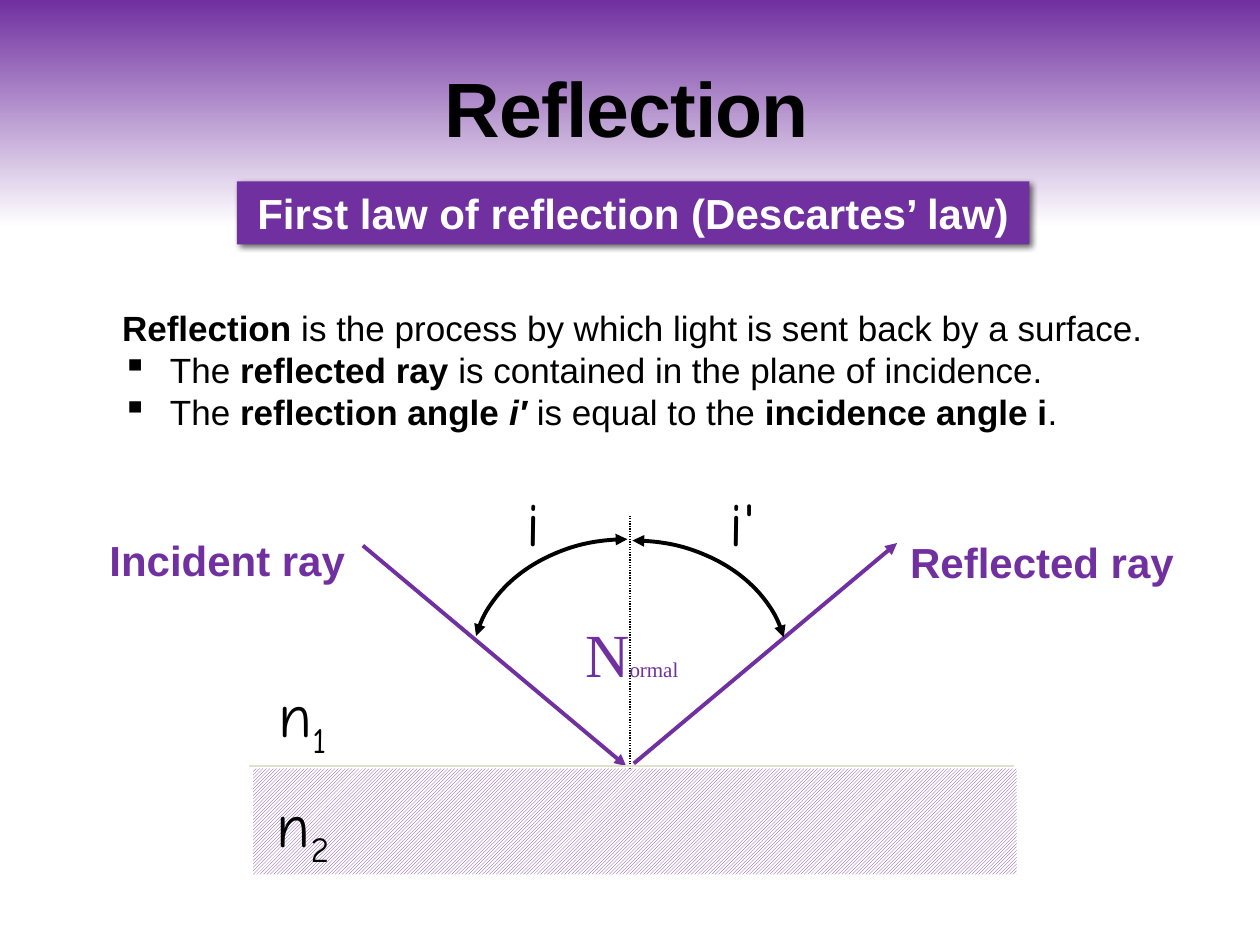
import pptx
import pptx.dml.color
import pptx.enum.dml
import pptx.enum.shapes
import pptx.enum.text
import pptx.oxml
import pptx.oxml.ns
import pptx.util

Inches = pptx.util.Inches
Pt = pptx.util.Pt
Shape = pptx.enum.shapes.MSO_SHAPE
Align = pptx.enum.text.PP_ALIGN
Anchor = pptx.enum.text.MSO_ANCHOR
Dash = pptx.enum.dml.MSO_LINE

PURPLE, BLACK, WHITE, BEIGE = "7030A0", "000000", "FFFFFF", "E2DFCC"
SANS, HAND, SERIF = "Arial", "Comic Neue", "Times New Roman"


def color(value):
    return pptx.dml.color.RGBColor.from_string(value)


def add_xml(parent, xml):
    namespace = pptx.oxml.ns.nsdecls("a")
    element = pptx.oxml.parse_xml(xml.replace(" ", f" {namespace} ", 1))
    parent.append(element)


class SlideBuilder:
    """Holds the shared style and the slide being built."""

    def __init__(self, presentation):
        self.slide = presentation.slides.add_slide(presentation.slide_layouts[5])
        self.shapes = self.slide.shapes

    def background(self, top, bottom, end):
        fill = self.slide.background.fill
        fill.gradient()
        fill.gradient_angle = 270
        for stop, value, position in zip(fill.gradient_stops, (top, bottom), (0, end)):
            stop.color.rgb = color(value)
            stop.position = position

    def run(self, paragraph, text, size, value=BLACK, font=SANS, bold=False,
            italic=False, subscript=False):
        run = paragraph.add_run()
        run.text = text
        run.font.size = Pt(size)
        run.font.name = font
        run.font.bold = bold
        run.font.italic = italic
        run.font.color.rgb = color(value)
        if subscript:
            run.font._element.set("baseline", "-25000")
        return run

    def title(self, text, box):
        title = self.shapes.title
        title.left, title.top, title.width, title.height = map(Inches, box)
        frame = title.text_frame
        frame.auto_size = pptx.enum.text.MSO_AUTO_SIZE.NONE
        frame.vertical_anchor = Anchor.BOTTOM
        paragraph = frame.paragraphs[0]
        paragraph.alignment = Align.CENTER
        paragraph.line_spacing = 0.85
        run = self.run(paragraph, text, 44, bold=True)
        run.font._element.set("spc", "-50")

    def text_box(self, box, wrap=True):
        frame = self.shapes.add_textbox(*map(Inches, box)).text_frame
        frame.word_wrap = wrap
        return frame

    def label(self, box, text, size, wrap=False, small="", small_size=None,
              subscript=False, **style):
        paragraph = self.text_box(box, wrap).paragraphs[0]
        paragraph.alignment = Align.CENTER
        self.run(paragraph, text, size, **style)
        if small:
            self.run(paragraph, small, small_size or size, subscript=subscript, **style)

    def body(self, box, lines, size):
        """Each line is (bulleted, runs); each run is (text, bold, italic)."""
        frame = self.text_box(box)
        for index, (bulleted, runs) in enumerate(lines):
            paragraph = frame.add_paragraph() if index else frame.paragraphs[0]
            paragraph.alignment = Align.JUSTIFY
            if bulleted:
                properties = paragraph._p.get_or_add_pPr()
                properties.set("marL", str(Inches(0.38)))
                properties.set("indent", str(-Inches(0.38)))
                add_xml(properties, '<a:buChar char="▪"/>')
            for text, bold, italic in runs:
                self.run(paragraph, text, size, bold=bold, italic=italic)

    def rectangle(self, box):
        shape = self.shapes.add_shape(Shape.RECTANGLE, *map(Inches, box))
        shape.shadow.inherit = False
        shape.line.fill.background()
        return shape

    def banner(self, box, text):
        shape = self.rectangle(box)
        shape.fill.solid()
        shape.fill.fore_color.rgb = color(PURPLE)
        effects = shape._element.spPr.find(pptx.oxml.ns.qn("a:effectLst"))
        add_xml(effects, '<a:outerShdw blurRad="44450" dist="25400" dir="2700000">'
                         '<a:srgbClr val="000000"><a:alpha val="60000"/></a:srgbClr>'
                         '</a:outerShdw>')
        paragraph = shape.text_frame.paragraphs[0]
        paragraph.alignment = Align.CENTER
        self.run(paragraph, text, 24, WHITE, bold=True)

    def hatched(self, box):
        fill = self.rectangle(box).fill
        fill.patterned()
        fill.pattern = pptx.enum.dml.MSO_PATTERN.LIGHT_UPWARD_DIAGONAL
        fill.fore_color.rgb = color(PURPLE)
        fill.back_color.rgb = color(WHITE)

    def stroke(self, shape, value, width, dash=None, arrows=()):
        shape.line.color.rgb = color(value)
        shape.line.width = Pt(width)
        if dash:
            shape.line.dash_style = dash
        for end in arrows:
            add_xml(shape.line._get_or_add_ln(), f'<a:{end}End type="triangle"/>')

    def line(self, start, end, value, width, **style):
        connector = self.shapes.add_connector(
            pptx.enum.shapes.MSO_CONNECTOR.STRAIGHT, *map(Inches, start + end))
        self.stroke(connector, value, width, **style)
        add_xml(connector._element.spPr, "<a:effectLst />")

    def angle_arc(self, center, radii, start, end):
        """Double-headed arc; angles in degrees, clockwise from the right."""
        (x, y), (across, down) = center, radii
        arc = self.shapes.add_shape(Shape.ARC, *map(
            Inches, (x - across, y - down, 2 * across, 2 * down)))
        arc.shadow.inherit = False
        arc.fill.background()
        for index, degrees in enumerate((start, end)):
            arc.adjustments[index] = degrees * 0.6
        self.stroke(arc, BLACK, 2.25, arrows=("head", "tail"))


def main():
    presentation = pptx.Presentation()
    presentation.slide_width, presentation.slide_height = Inches(10), Inches(7.5)
    builder = SlideBuilder(presentation)
    builder.background(PURPLE, WHITE, 0.24)
    builder.title("Reflection", (0.85, 0.51, 8.25, 0.76))
    builder.body((0.87, 2.38, 8.35, 1.11), [
        (False, [("Reflection", True, False),
                 (" is the process by which light is sent back by a surface.", False, False)]),
        (True, [("The ", False, False), ("reflected ray", True, False),
                (" is contained in the plane of incidence.", False, False)]),
        (True, [("The ", False, False), ("reflection angle ", True, False),
                ("i′ ", True, True), ("is equal to the ", False, False),
                ("incidence angle i", True, False), (".", False, False)]),
    ], 20)

    builder.line((2.88, 4.33), (4.97, 6.08), PURPLE, 2.25, arrows=("tail",))
    builder.line((5.03, 6.06), (7.12, 4.31), PURPLE, 2.25, arrows=("tail",))
    builder.line((5, 6.17), (5, 4.09), BLACK, 0.75, dash=Dash.ROUND_DOT)
    builder.label((4.53, 4.84, 0.97, 0.7), "N", 35, small="ormal", small_size=12,
                  value=PURPLE, font=SERIF)

    builder.hatched((2.01, 6.1, 6.06, 0.84))
    for box, index in (((2.09, 5.32, 0.62, 0.69), "1"), ((2.07, 6.19, 0.67, 0.69), "2")):
        builder.label(box, "n", 35, small=index, subscript=True, font=HAND)
    builder.line((1.98, 6.08), (8.05, 6.08), BEIGE, 0.75)

    builder.angle_arc((5.02, 5.27), (1.23, 0.98), 270, 350)
    builder.angle_arc((4.98, 5.26), (1.23, 0.98), 190, 270)
    builder.label((4.06, 3.8, 0.35, 0.69), "i", 35, font=HAND)
    builder.label((5.62, 3.8, 0.54, 0.69), "i'", 35, font=HAND)
    for box, text in (((7.1, 4.21, 2.34, 0.51), "Reflected ray"),
                      ((0.75, 4.19, 2.2, 0.51), "Incident ray ")):
        builder.label(box, text, 24, wrap=True, value=PURPLE, bold=True)
    builder.banner((1.88, 1.44, 6.29, 0.5), "First law of reflection (Descartes’ law)")
    presentation.save("out.pptx")


if __name__ == "__main__":
    main()
